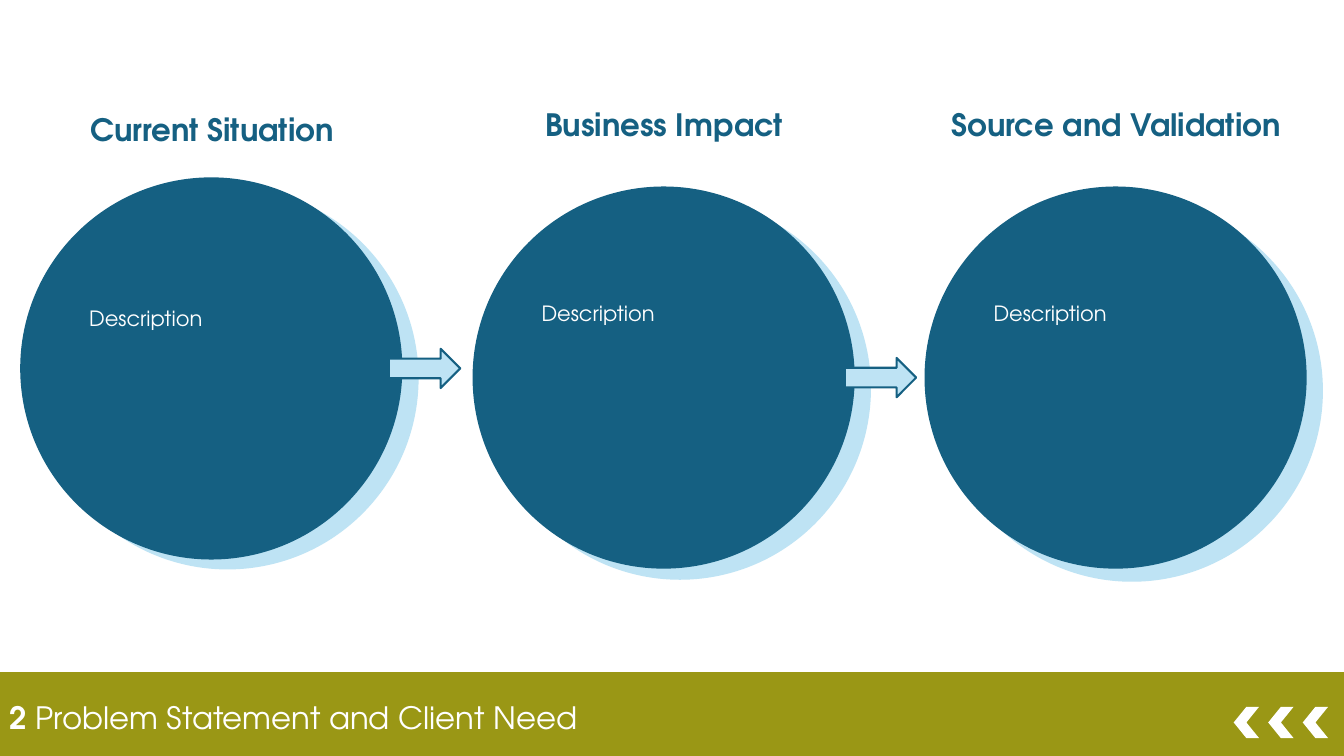
from dataclasses import dataclass
from typing import Optional

from pptx import Presentation
from pptx import util as u
from pptx.dml.color import RGBColor
from pptx.enum import shapes, text

FONT = "TeX Gyre Adventor"
BLUE = RGBColor(0x15, 0x60, 0x82)
PALE = RGBColor(0xBE, 0xE3, 0xF4)
OLIVE = RGBColor(0x9A, 0x97, 0x15)
WHITE = RGBColor(0xFF, 0xFF, 0xFF)

WIDTH, HEIGHT = 33.87, 19.05
DIAMETER = 9.63
ARROW_W, ARROW_H = 1.8, 0.99
BAR_TOP = 16.94
CHEVRON_LEFT, CHEVRON_STEP = 31.09, 0.87


@dataclass
class Stage:
    title: str
    left: float
    top: float
    halo_top: float
    title_top: float
    text_top: float
    arrow_left: Optional[float] = None


STAGES = [
    Stage("Current Situation", 0.51, 4.47, 4.72, 2.67, 7.57, 9.8),
    Stage("Business Impact", 11.91, 4.7, 4.98, 2.54, 7.44, 21.29),
    Stage("Source and Validation", 23.3, 4.7, 5.03, 2.54, 7.44),
]


def add_solid(s, kind, left: float, top: float, width: float, height: float,
              fill: RGBColor, line: Optional[RGBColor] = None):
    sp = s.shapes.add_shape(kind, u.Cm(left), u.Cm(top), u.Cm(width), u.Cm(height))
    sp.shadow.inherit = False
    sp.fill.solid()
    sp.fill.fore_color.rgb = fill
    if line is None:
        sp.line.fill.background()
    else:
        sp.line.color.rgb = line
        sp.line.width = u.Pt(1.5)
    return sp


def add_label(s, left: float, top: float, width: float, height: float,
              runs: list[tuple[str, bool]], size: float, color: RGBColor,
              align=text.PP_ALIGN.LEFT) -> None:
    """Add one line of text made of (wording, bold) runs."""
    sp = s.shapes.add_textbox(u.Cm(left), u.Cm(top), u.Cm(width), u.Cm(height))
    tf = sp.text_frame
    tf.word_wrap = True
    p = tf.paragraphs[0]
    p.alignment = align
    for wording, bold in runs:
        r = p.add_run()
        r.text = wording
        for name, value in {"name": FONT, "size": u.Pt(size), "bold": bold}.items():
            setattr(r.font, name, value)
        r.font.color.rgb = color


def add_stage(s, stage: Stage) -> None:
    kinds = shapes.MSO_SHAPE
    halo_left = stage.left + 0.41
    add_solid(s, kinds.OVAL, halo_left, stage.halo_top, DIAMETER, DIAMETER, PALE)
    add_solid(s, kinds.OVAL, stage.left, stage.top, DIAMETER, DIAMETER, BLUE)
    if stage.arrow_left is not None:
        arrow_top = stage.top + (DIAMETER - ARROW_H) / 2
        add_solid(s, kinds.RIGHT_ARROW, stage.arrow_left, arrow_top,
                  ARROW_W, ARROW_H, PALE, BLUE)
    add_label(s, halo_left, stage.title_top, 8.84, 1.19, [(stage.title, True)],
              22, BLUE, text.PP_ALIGN.CENTER)
    add_label(s, halo_left + 1.08, stage.text_top, 8.18, 0.89,
              [("Description", False)], 15, WHITE)


def add_footer(s) -> None:
    add_solid(s, shapes.MSO_SHAPE.RECTANGLE, 0, BAR_TOP, WIDTH, HEIGHT - BAR_TOP, OLIVE)
    add_label(s, 0, 17.48, 23.29, 1.19,
              [("2", True), (" Problem Statement and Client Need", False)], 22, WHITE)
    for i in range(3):
        sp = add_solid(s, shapes.MSO_SHAPE.CHEVRON, CHEVRON_LEFT + i * CHEVRON_STEP,
                       17.81, 0.64, 0.79, WHITE)
        sp.rotation = 180


def main() -> None:
    prs = Presentation()
    prs.slide_width, prs.slide_height = u.Cm(WIDTH), u.Cm(HEIGHT)
    s = prs.slides.add_slide(prs.slide_layouts[6])
    for stage in STAGES:
        add_stage(s, stage)
    add_footer(s)
    prs.save("out.pptx")


if __name__ == "__main__":
    main()
